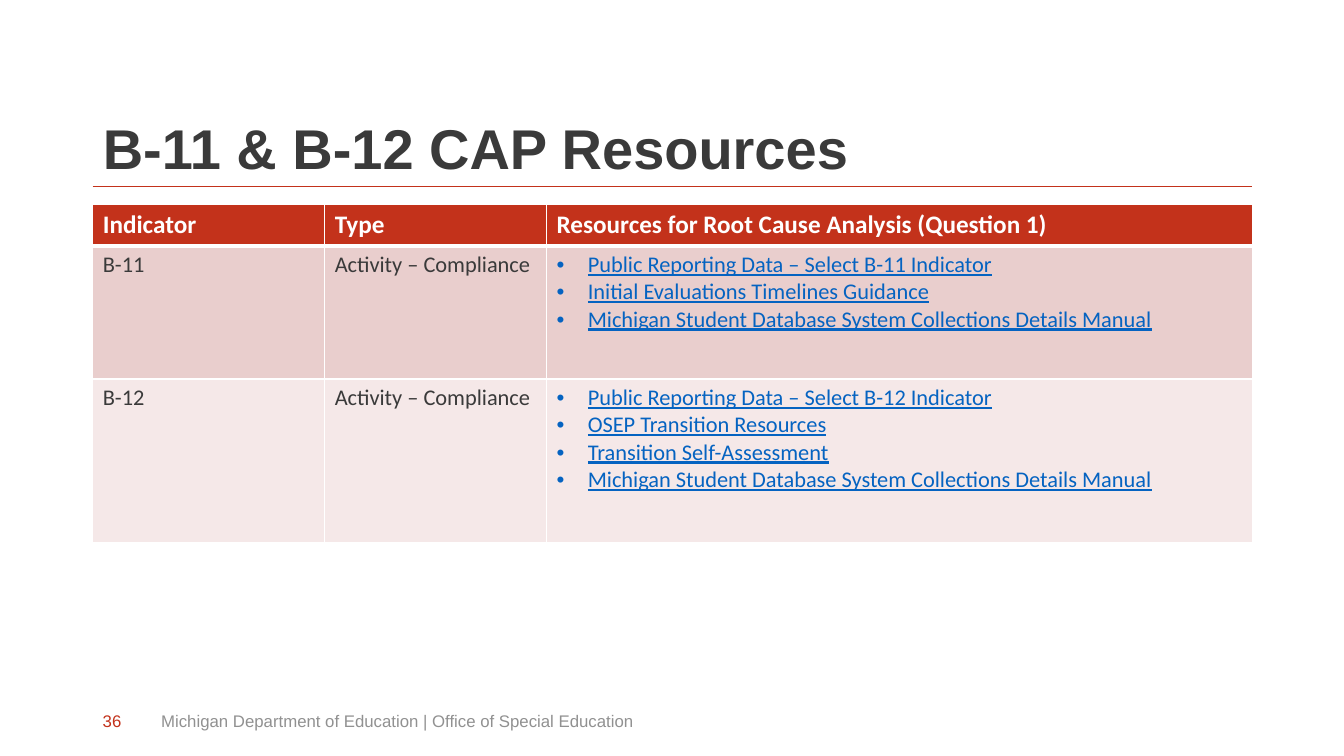
from dataclasses import dataclass

from lxml import etree
from pptx import Presentation
from pptx import util as u
from pptx.dml.color import RGBColor
from pptx.enum import shapes, text
from pptx.oxml import ns


@dataclass(frozen=True)
class Theme:
    accent: str = "C3321B"
    ink: str = "3A3A3A"
    link: str = "0563C1"
    muted: str = "919191"
    white: str = "FFFFFF"
    bands: tuple = ("E9CECD", "F5E8E8")
    heading_font: str = "Arial"
    table_font: str = "Calibri"
    title_size: int = 40
    header_size: int = 18
    body_size: int = 16
    footer_size: int = 12


THEME = Theme()
LEFT, WIDTH = 0.92, 11.5
COLUMN_WIDTHS = (2.3, 2.2, 7)
ROW_HEIGHTS = (0.41, 1.32, 1.62)
BULLET_INDENT = 0.31

HEADERS = ("Indicator", "Type", "Resources for Root Cause Analysis (Question 1)")
MANUAL = "Michigan Student Database System Collections Details Manual"
INDICATORS = (
    ("B-11", "Activity – Compliance", (
        "Public Reporting Data – Select B-11 Indicator",
        "Initial Evaluations Timelines Guidance",
        MANUAL,
    )),
    ("B-12", "Activity – Compliance", (
        "Public Reporting Data – Select B-12 Indicator",
        "OSEP Transition Resources",
        "Transition Self-Assessment",
        MANUAL,
    )),
)


def color(value):
    return RGBColor.from_string(value)


def add_bullet(paragraph):
    properties = paragraph._p.get_or_add_pPr()
    properties.set("marL", str(u.Inches(BULLET_INDENT)))
    properties.set("indent", str(-u.Inches(BULLET_INDENT)))
    etree.SubElement(properties, ns.qn("a:buFont"), typeface="Arial")
    etree.SubElement(properties, ns.qn("a:buChar"), char="•")


def write(frame, *lines, size, ink, font, bold=False, underline=False,
          bullets=False, spacing=None):
    """Fill a text frame with one paragraph per line."""
    frame.word_wrap = True
    for index, line in enumerate(lines):
        paragraph = frame.add_paragraph() if index else frame.paragraphs[0]
        if bullets:
            add_bullet(paragraph)
        paragraph.alignment = text.PP_ALIGN.LEFT
        if spacing:
            paragraph.line_spacing = spacing
        run = paragraph.add_run()
        run.text = line
        run.font.name = font
        run.font.size = u.Pt(size)
        run.font.bold = bold
        run.font.underline = underline
        run.font.color.rgb = color(ink)


def set_borders(cell, **widths):
    """Draw white cell borders; widths are points by side (L, R, T, B)."""
    properties = cell._tc.get_or_add_tcPr()
    for side in "LRTB":
        line = etree.SubElement(properties, ns.qn(f"a:ln{side}"),
                                w=str(u.Pt(widths.get(side, 1))))
        fill = etree.SubElement(line, ns.qn("a:solidFill"))
        etree.SubElement(fill, ns.qn("a:srgbClr"), val=THEME.white)


def add_title(slide, left, top, width, height):
    # Title placeholder
    title = slide.shapes.title
    title.left, title.top = u.Inches(left), u.Inches(top)
    title.width, title.height = u.Inches(width), u.Inches(height)
    frame = title.text_frame
    frame.auto_size = text.MSO_AUTO_SIZE.NONE
    frame.vertical_anchor = text.MSO_ANCHOR.BOTTOM
    write(frame, "B-11 & B-12 CAP Resources", size=THEME.title_size,
          ink=THEME.ink, font=THEME.heading_font, bold=True, spacing=0.9)

    # Rule along the bottom of the title
    bottom = u.Inches(top + height)
    rule = slide.shapes.add_connector(
        shapes.MSO_CONNECTOR.STRAIGHT, u.Inches(left), bottom,
        u.Inches(left + width), bottom)
    rule.line.color.rgb = color(THEME.accent)
    rule.line.width = u.Pt(0.5)
    etree.SubElement(rule._element.spPr, ns.qn("a:effectLst"))


def add_resource_table(slide, left, top, width, height):
    table = slide.shapes.add_table(
        len(ROW_HEIGHTS), len(COLUMN_WIDTHS), u.Inches(left), u.Inches(top),
        u.Inches(width), u.Inches(height)).table
    for column, column_width in zip(table.columns, COLUMN_WIDTHS):
        column.width = u.Inches(column_width)
    for row, row_height in zip(table.rows, ROW_HEIGHTS):
        row.height = u.Inches(row_height)

    # Header row
    for cell, label in zip(table.rows[0].cells, HEADERS):
        set_borders(cell, B=3)
        cell.fill.solid()
        cell.fill.fore_color.rgb = color(THEME.accent)
        cell.vertical_anchor = text.MSO_ANCHOR.MIDDLE
        write(cell.text_frame, label, size=THEME.header_size,
              ink=THEME.white, font=THEME.table_font, bold=True)

    # Indicator rows
    for number, (name, kind, resources) in enumerate(INDICATORS, start=1):
        for column, lines in enumerate(((name,), (kind,), resources)):
            is_list = column == 2
            cell = table.cell(number, column)
            set_borders(cell, T=3 if number == 1 else 1)
            cell.fill.solid()
            cell.fill.fore_color.rgb = color(THEME.bands[number - 1])
            write(cell.text_frame, *lines, size=THEME.body_size,
                  ink=THEME.link if is_list else THEME.ink,
                  font=THEME.table_font, underline=is_list, bullets=is_list)


def add_footer(slide, left, top, width, height):
    # Page number, then department name
    name_offset = 0.58
    parts = (("36", 0, 0.45, THEME.accent),
             ("Michigan Department of Education | Office of Special Education",
              name_offset, width - name_offset, THEME.muted))
    for label, offset, label_width, ink in parts:
        box = slide.shapes.add_textbox(
            u.Inches(left + offset), u.Inches(top),
            u.Inches(label_width), u.Inches(height))
        box.text_frame.vertical_anchor = text.MSO_ANCHOR.MIDDLE
        write(box.text_frame, label, size=THEME.footer_size, ink=ink,
              font=THEME.heading_font)


def main():
    presentation = Presentation()
    presentation.slide_width = u.Inches(13.33)
    presentation.slide_height = u.Inches(7.5)
    slide = presentation.slides.add_slide(presentation.slide_layouts[5])
    add_title(slide, LEFT, 0.4, WIDTH, 1.45)
    add_resource_table(slide, LEFT, 2.03, WIDTH, sum(ROW_HEIGHTS))
    add_footer(slide, LEFT, 6.95, 8.97, 0.4)
    presentation.save("out.pptx")


if __name__ == "__main__":
    main()
